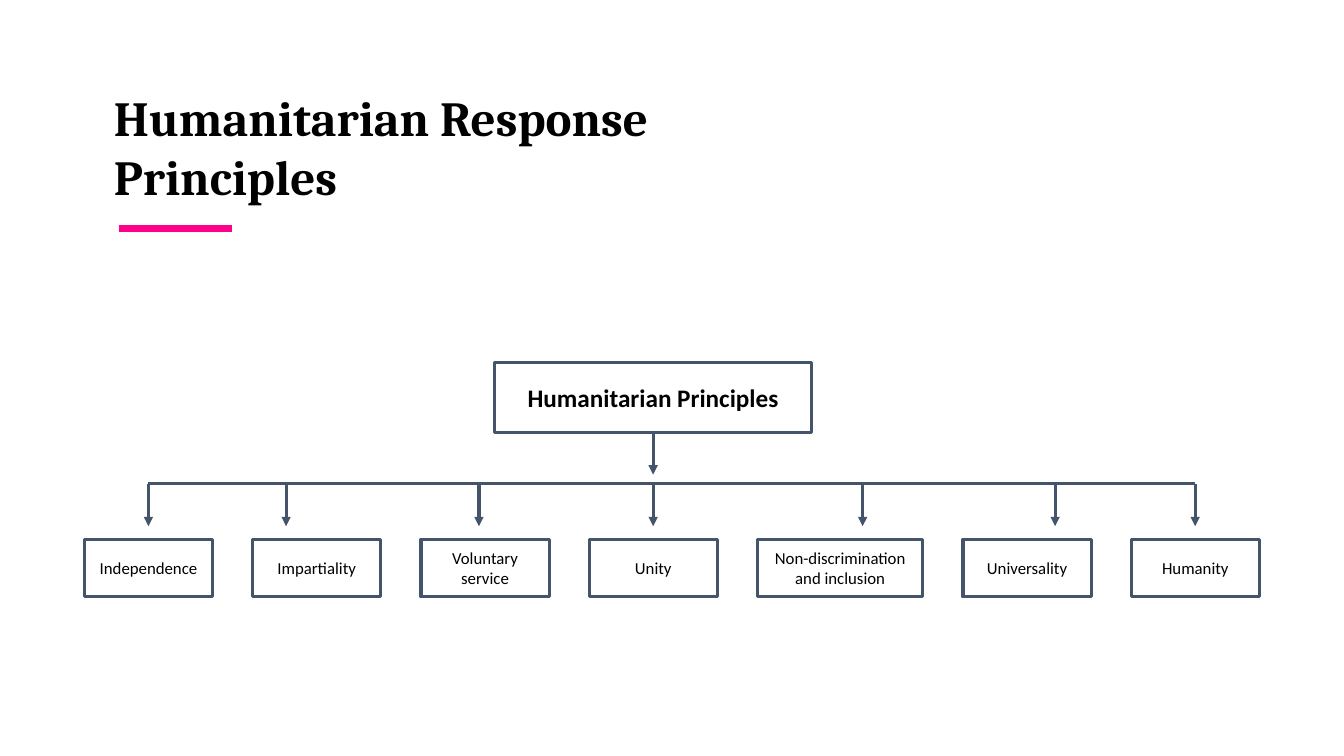
from lxml import etree
from pptx import Presentation
from pptx.enum import shapes, text
from pptx.oxml import ns
from pptx.util import Cm, Pt

COLORS = {"ink": "000000", "slate": "44546A", "pink": "FF008A"}

# Label, box width, and x of its arrow from the chart's left edge (cm)
PRINCIPLES = [
    ("Independence", 3.23, 1.61),
    ("Impartiality", 3.23, 5.08),
    ("Voluntary service", 3.23, 9.94),
    ("Unity", 3.23, 14.33),
    ("Non-discrimination and inclusion", 4.17, 19.61),
    ("Universality", 3.23, 24.46),
    ("Humanity", 3.23, 27.99),
]
ARROW = 1.07
GAP = 1.01


def rgb(name):
    return RGBColor.from_string(COLORS[name])


def set_font(p, name, size, bold=False):
    p.font.name = name
    p.font.size = Pt(size)
    p.font.bold = bold
    p.font.color.rgb = rgb("ink")


def add_line(s, x1, y1, x2, y2, color="slate", width=2.25, arrow=False):
    line = s.shapes.add_connector(
        shapes.MSO_CONNECTOR.STRAIGHT, Cm(x1), Cm(y1), Cm(x2), Cm(y2))
    line.line.color.rgb = rgb(color)
    line.line.width = Pt(width)
    if arrow:
        ln = line.line._get_or_add_ln()
        etree.SubElement(ln, ns.qn("a:tailEnd"), type="triangle")
    etree.SubElement(line._element.spPr, ns.qn("a:effectLst"))
    return line


def add_box(s, x, y, w, h, label, size, bold=False):
    sp = s.shapes.add_shape(
        shapes.MSO_SHAPE.RECTANGLE, Cm(x), Cm(y), Cm(w), Cm(h))
    sp.shadow.inherit = False
    sp.fill.background()
    sp.line.color.rgb = rgb("slate")
    sp.line.width = Pt(2.25)
    tf = sp.text_frame
    tf.word_wrap = True
    tf.vertical_anchor = text.MSO_ANCHOR.MIDDLE
    p = tf.paragraphs[0]
    p.text = label
    p.alignment = text.PP_ALIGN.CENTER
    set_font(p, "Calibri", size, bold)
    return sp


def add_title(s, x, y, w, h):
    """Heading with a short accent rule below it."""
    tf = s.shapes.add_textbox(Cm(x), Cm(y), Cm(w), Cm(h)).text_frame
    tf.word_wrap = True
    p = tf.paragraphs[0]
    p.text = "Humanitarian Response Principles"
    set_font(p, "Cambria", 35, bold=True)
    rule_y = y + h + 0.43
    add_line(s, x + 0.38, rule_y, x + 3.23, rule_y, "pink", 4.5)


def add_principles_chart(s, x, y, w, h):
    """Head box, a rail with arrows, and a row of principle boxes."""
    head_w, head_h, box_h = 7.98, 1.75, 1.45
    rail_y = y + 3.05
    arrows = [x + offset for _, _, offset in PRINCIPLES]
    mid = arrows[len(arrows) // 2]

    head = add_box(s, mid - head_w / 2, y, head_w, head_h,
                   "Humanitarian Principles", 18, bold=True)
    trunk = add_line(s, mid, y + head_h, mid, y + head_h + ARROW, arrow=True)
    trunk.begin_connect(head, 2)

    add_line(s, arrows[0], rail_y, arrows[-1], rail_y)
    for arrow_x in arrows:
        add_line(s, arrow_x, rail_y, arrow_x, rail_y + ARROW, arrow=True)

    left = x
    for label, box_w, _ in PRINCIPLES:
        add_box(s, left, y + h - box_h, box_w, box_h, label, 12)
        left += box_w + GAP


def main():
    prs = Presentation()
    prs.slide_width, prs.slide_height = Cm(33.87), Cm(19.05)
    s = prs.slides.add_slide(prs.slide_layouts[6])
    add_title(s, 2.62, 2.08, 16.87, 3.25)
    add_principles_chart(s, 2.13, 9.14, 29.61, 5.9)
    prs.save("out.pptx")


from pptx.dml.color import RGBColor

if __name__ == "__main__":
    main()
